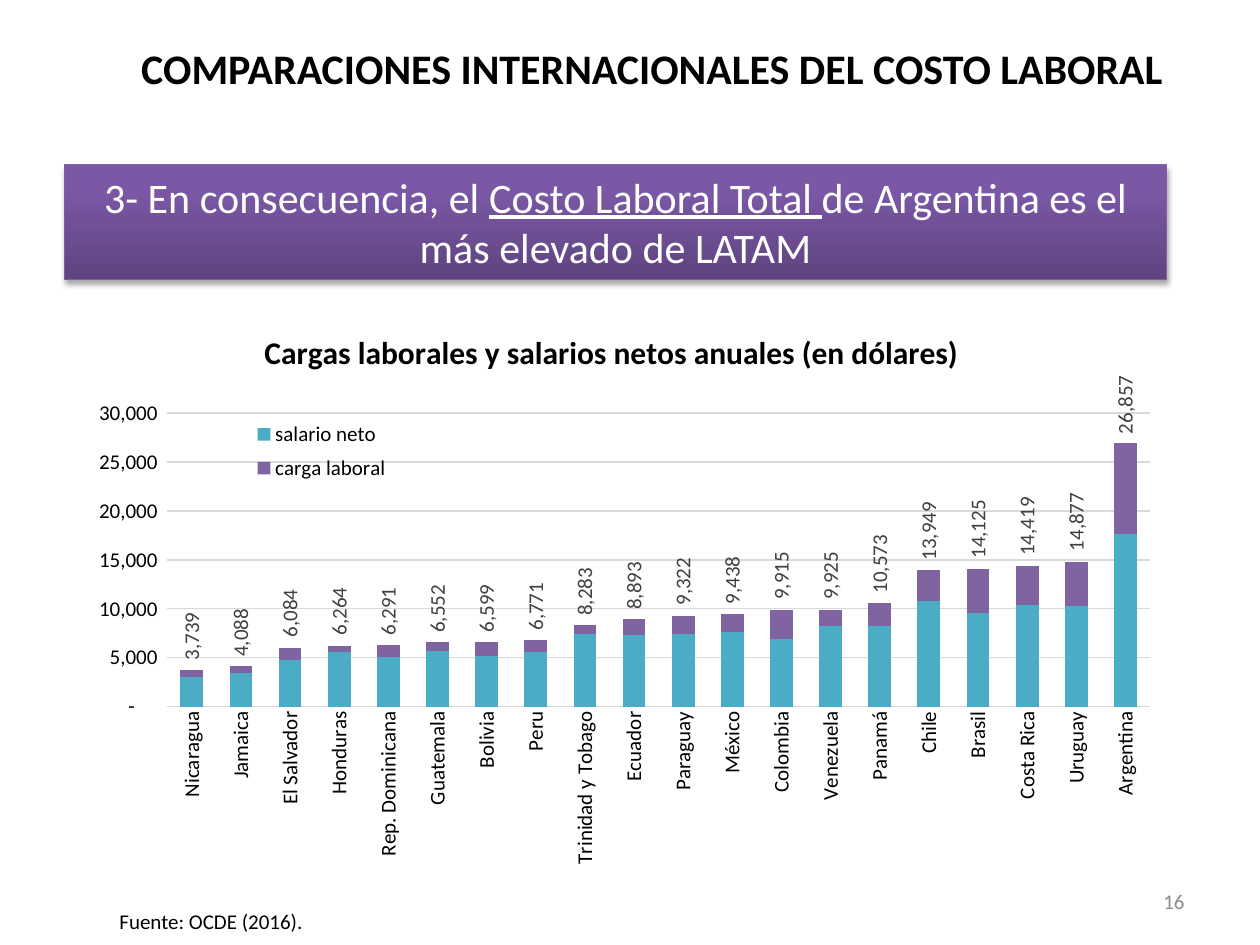
from copy import deepcopy
from dataclasses import dataclass
from typing import Any

from lxml import etree
from pptx import Presentation
from pptx import util as u
from pptx.chart.data import CategoryChartData
from pptx.dml.color import RGBColor
from pptx.enum import chart as charts, shapes, text
from pptx.oxml import parse_xml
from pptx.oxml.ns import nsdecls, qn

BLACK = RGBColor(0x00, 0x00, 0x00)
WHITE = RGBColor(0xFF, 0xFF, 0xFF)
GRAY = RGBColor(0x8C, 0x8C, 0x8C)
LABEL_GRAY = RGBColor(0x40, 0x40, 0x40)
GRID_GRAY = RGBColor(0xD9, 0xD9, 0xD9)
PURPLE_LINE = RGBColor(0x7D, 0x60, 0xA0)
NET_TEAL = RGBColor(0x4B, 0xAC, 0xC6)
CHARGE_PURPLE = RGBColor(0x80, 0x64, 0xA2)
BANNER_STOPS = ((0, "5F4480"), (80, "7B58A6"), (100, "7C57A8"))

FONT = "Calibri"
NUMBER_FORMAT = '_(* #,##0_);_(* \\(#,##0\\);_(* "-"??_);_(@_)'
VERTICAL = "-5400000"


@dataclass(frozen=True)
class Box:
    left: float
    top: float
    width: float
    height: float

    def lengths(self) -> list[u.Length]:
        return [u.Inches(v) for v in (self.left, self.top, self.width, self.height)]


@dataclass(frozen=True)
class Run:
    words: str
    underline: bool = False


@dataclass(frozen=True)
class Country:
    name: str
    net_salary: int
    labor_charge: int
    total: int


COUNTRIES = [
    Country("Nicaragua", 3000, 700, 3739),
    Country("Jamaica", 3400, 700, 4088),
    Country("El Salvador", 4800, 1200, 6084),
    Country("Honduras", 5600, 600, 6264),
    Country("Rep. Dominicana", 5100, 1200, 6291),
    Country("Guatemala", 5700, 900, 6552),
    Country("Bolivia", 5200, 1400, 6599),
    Country("Peru", 5600, 1200, 6771),
    Country("Trinidad y Tobago", 7400, 900, 8283),
    Country("Ecuador", 7300, 1600, 8893),
    Country("Paraguay", 7400, 1900, 9322),
    Country("México", 7600, 1900, 9438),
    Country("Colombia", 6900, 3000, 9915),
    Country("Venezuela", 8200, 1700, 9925),
    Country("Panamá", 8200, 2400, 10573),
    Country("Chile", 10800, 3200, 13949),
    Country("Brasil", 9600, 4500, 14125),
    Country("Costa Rica", 10400, 4000, 14419),
    Country("Uruguay", 10300, 4500, 14877),
    Country("Argentina", 17600, 9300, 26857),
]


def apply(target: Any, values: dict[str, Any]) -> None:
    for name, value in values.items():
        setattr(target, name, value)


def style_font(font: Any, size: float, color: RGBColor, **extra: Any) -> None:
    apply(font, {"name": FONT, "size": u.Pt(size), **extra})
    font.color.rgb = color


def write(shape: Any, runs: list[Run], size: float, color: RGBColor,
          alignment: Any, anchor: Any = text.MSO_ANCHOR.TOP,
          wrap: bool = True, bold: bool = False) -> None:
    frame = shape.text_frame
    apply(frame, {"word_wrap": wrap, "vertical_anchor": anchor,
                  "auto_size": text.MSO_AUTO_SIZE.NONE})
    paragraph = frame.paragraphs[0]
    paragraph.alignment = alignment
    for item in runs:
        run = paragraph.add_run()
        run.text = item.words
        style_font(run.font, size, color, bold=bold, underline=item.underline)


def add_banner(slide: Any, box: Box, runs: list[Run]) -> None:
    banner = slide.shapes.add_shape(shapes.MSO_SHAPE.RECTANGLE, *box.lengths())
    banner.fill.gradient()
    banner.fill.gradient_angle = 90
    properties = banner._element.spPr
    stops = properties.find(qn("a:gradFill")).find(qn("a:gsLst"))
    for stop in list(stops):
        stops.remove(stop)
    for percent, color in BANNER_STOPS:
        stop = etree.SubElement(stops, qn("a:gs"), pos=str(percent * 1000))
        etree.SubElement(stop, qn("a:srgbClr"), val=color)
    banner.line.color.rgb = PURPLE_LINE
    banner.line.width = u.Pt(0.75)
    banner.shadow.inherit = False
    properties.find(qn("a:effectLst")).append(parse_xml(
        f'<a:outerShdw {nsdecls("a")} blurRad="{u.Pt(3.1)}" dist="{u.Pt(1.8)}" '
        'dir="5400000" rotWithShape="0"><a:srgbClr val="000000">'
        '<a:alpha val="35000"/></a:srgbClr></a:outerShdw>'))
    write(banner, runs, 24, WHITE, text.PP_ALIGN.CENTER)


def place(element: Any, after: str | None, **values: Any) -> None:
    for old in element.findall(qn("c:layout")):
        element.remove(old)
    items = "".join(f'<c:{name} val="{value}"/>' for name, value in values.items())
    layout = parse_xml(f'<c:layout {nsdecls("c")}><c:manualLayout>{items}'
                       "</c:manualLayout></c:layout>")
    position = element.index(element.find(qn(after))) + 1 if after else 0
    element.insert(position, layout)


def rotate_text(element: Any) -> None:
    body = element.find(qn("c:txPr")).find(qn("a:bodyPr"))
    for name, value in {"rot": VERTICAL, "vert": "horz"}.items():
        body.set(name, value)


def move_totals_to_line(chart: Any) -> None:
    bars = chart._chartSpace.find(".//" + qn("c:barChart"))
    totals = bars.findall(qn("c:ser"))[-1]
    for bar_setting in totals.findall(qn("c:invertIfNegative")):
        totals.remove(bar_setting)
    lines = parse_xml(f'<c:lineChart {nsdecls("c")}><c:grouping val="standard"/>'
                      '<c:varyColors val="0"/></c:lineChart>')
    lines.append(totals)
    etree.SubElement(lines, qn("c:marker"), val="1")
    for axis_id in bars.findall(qn("c:axId")):
        lines.append(deepcopy(axis_id))
    bars.addnext(lines)

    series = chart.plots[1].series[0]
    series.smooth = False
    series.format.line.fill.background()
    series.marker.style = charts.XL_MARKER_STYLE.NONE
    labels = series.data_labels
    apply(labels, {"show_value": True, "number_format": NUMBER_FORMAT,
                   "number_format_is_linked": False,
                   "position": charts.XL_LABEL_POSITION.ABOVE})
    style_font(labels.font, 12, LABEL_GRAY)
    rotate_text(labels._element)


def style_axes(chart: Any) -> None:
    for axis in (chart.category_axis, chart.value_axis):
        apply(axis, {"major_tick_mark": charts.XL_TICK_MARK.NONE,
                     "minor_tick_mark": charts.XL_TICK_MARK.NONE})
        style_font(axis.tick_labels.font, 12, BLACK)
    rotate_text(chart.category_axis._element)
    values = chart.value_axis
    apply(values, {"minimum_scale": 0, "maximum_scale": 30000,
                   "major_unit": 5000, "has_major_gridlines": True})
    apply(values.tick_labels, {"number_format": NUMBER_FORMAT,
                               "number_format_is_linked": False})
    values.format.line.fill.background()
    for line in (chart.category_axis.format.line, values.major_gridlines.format.line):
        line.color.rgb = GRID_GRAY
        line.width = u.Pt(0.75)


def add_cost_chart(slide: Any, box: Box) -> None:
    data = CategoryChartData()
    data.categories = [country.name for country in COUNTRIES]
    data.add_series("salario neto", [c.net_salary for c in COUNTRIES])
    data.add_series("carga laboral", [c.labor_charge for c in COUNTRIES])
    data.add_series("Series 3", [c.total for c in COUNTRIES])
    chart = slide.shapes.add_chart(
        charts.XL_CHART_TYPE.COLUMN_STACKED, *box.lengths(), data).chart
    style_font(chart.font, 10, BLACK)

    plot = chart.plots[0]
    apply(plot, {"gap_width": 116, "overlap": 100, "vary_by_categories": False})
    for series, color in zip(plot.series, (NET_TEAL, CHARGE_PURPLE)):
        series.format.fill.solid()
        series.format.fill.fore_color.rgb = color
    move_totals_to_line(chart)
    style_axes(chart)
    edges = {"xMode": "edge", "yMode": "edge"}
    place(chart._chartSpace.chart.plotArea, None, layoutTarget="inner", **edges,
          x=0.11, y=0.18, w=0.86, h=0.5)

    title = chart.chart_title
    run = title.text_frame.paragraphs[0].add_run()
    run.text = "Cargas laborales y salarios netos anuales (en dólares)"
    style_font(run.font, 18, BLACK, bold=True)
    place(title._element, "c:tx", **edges, x=0.19, y=0.03)

    chart.has_legend = True
    legend = chart.legend
    apply(legend, {"position": charts.XL_LEGEND_POSITION.BOTTOM,
                   "include_in_layout": False})
    style_font(legend.font, 12, BLACK)
    place(legend._element, "c:legendPos", **edges, x=0.17, y=0.18, w=0.15, h=0.13)
    legend._element.find(qn("c:legendPos")).addnext(parse_xml(
        f'<c:legendEntry {nsdecls("c")}><c:idx val="2"/><c:delete val="1"/></c:legendEntry>'))


def main() -> None:
    presentation = Presentation()
    apply(presentation, {"slide_width": u.Inches(10), "slide_height": u.Inches(7.5)})
    slide = presentation.slides.add_slide(presentation.slide_layouts[5])

    title = slide.shapes.title
    apply(title, dict(zip(("left", "top", "width", "height"),
                          Box(0.35, 0.29, 9.65, 0.5).lengths())))
    write(title, [Run("COMPARACIONES INTERNACIONALES DEL COSTO LABORAL")],
          24, BLACK, text.PP_ALIGN.CENTER, bold=True)

    number = slide.shapes.add_textbox(*Box(7.17, 6.95, 2.33, 0.4).lengths())
    write(number, [Run("16")], 12, GRAY, text.PP_ALIGN.RIGHT, text.MSO_ANCHOR.MIDDLE)
    source = slide.shapes.add_textbox(*Box(0.83, 7.16, 1.69, 0.3).lengths())
    write(source, [Run("Fuente: OCDE (2016).")], 12, BLACK,
          text.PP_ALIGN.CENTER, wrap=False)

    add_banner(slide, Box(0.51, 1.31, 8.75, 0.91), [
        Run("3- En consecuencia, el "),
        Run("Costo Laboral Total ", underline=True),
        Run("de Argentina es el más elevado de LATAM"),
    ])
    add_cost_chart(slide, Box(0.33, 2.44, 9.07, 4.66))
    presentation.save("out.pptx")


if __name__ == "__main__":
    main()
